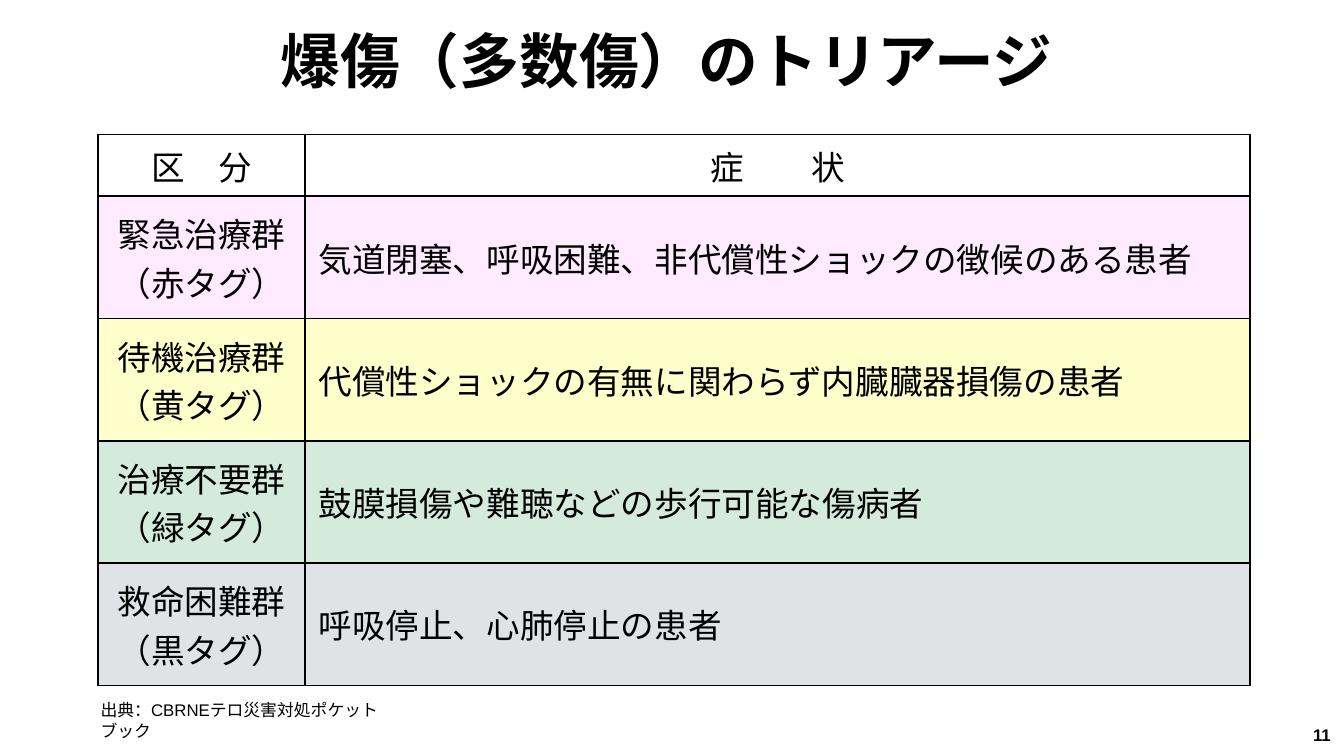
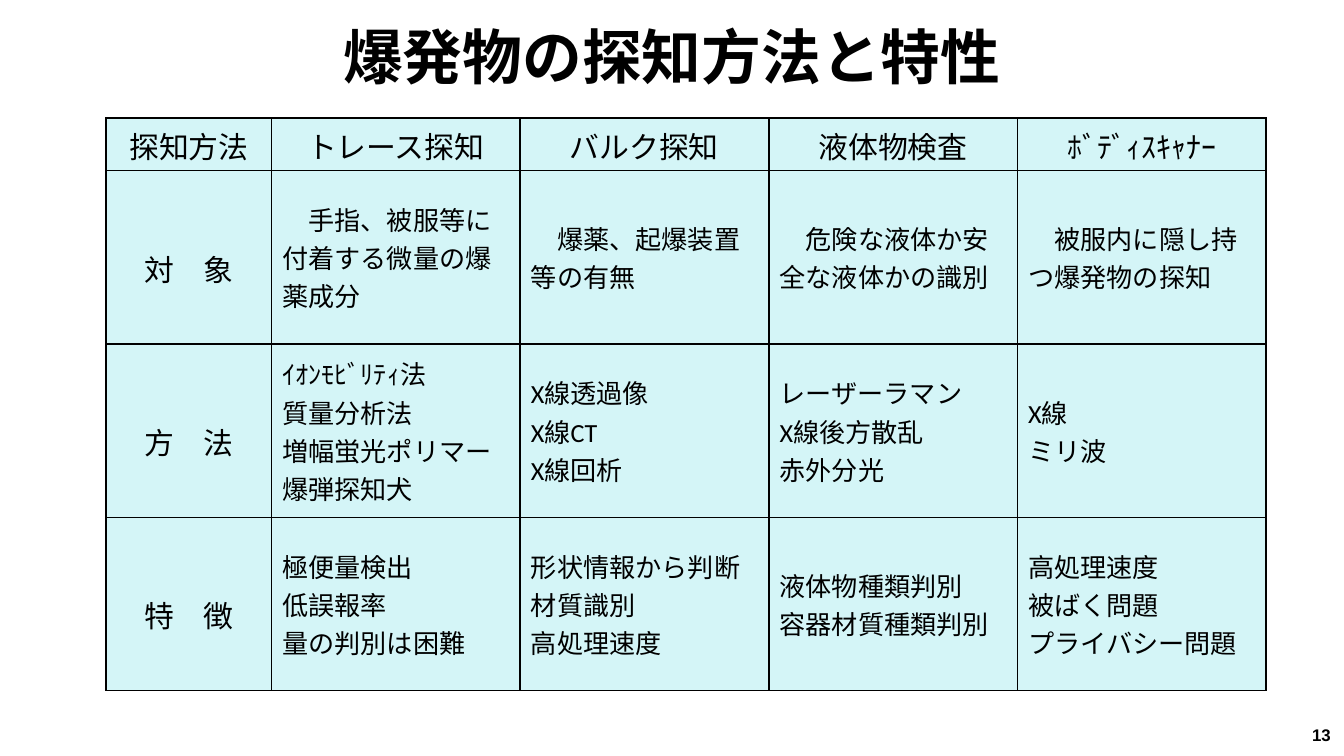
"""Build two slides on blast triage and explosive detection methods."""
from dataclasses import dataclass

import pptx
import pptx.dml.color
import pptx.enum.text
import pptx.oxml
import pptx.oxml.ns
import pptx.util
from pptx.util import Inches

ALIGN = pptx.enum.text.PP_ALIGN
MIDDLE = pptx.enum.text.MSO_ANCHOR.MIDDLE


@dataclass(frozen=True)
class Theme:
    heading_font: str = "Calibri"
    note_font: str = "Arial"
    ink: str = "000000"
    white: str = "FFFFFF"
    red_tag: str = "FFEBFF"
    yellow_tag: str = "FFFFCC"
    green_tag: str = "D4EBDB"
    black_tag: str = "DFE3E5"
    aqua: str = "D4F5F7"
    title_size: float = 32
    triage_size: float = 18
    label_size: float = 16
    detail_size: float = 14
    note_size: float = 9
    border: float = 1


THEME = Theme()


@dataclass(frozen=True)
class Box:
    left: float
    top: float
    width: float
    height: float

    def place(self) -> tuple:
        return tuple(Inches(v) for v in (self.left, self.top, self.width, self.height))


@dataclass(frozen=True)
class Row:
    cells: tuple
    fill: str


@dataclass(frozen=True)
class Grid:
    left: float
    top: float
    columns: tuple
    header_height: float
    row_height: float
    rows: tuple
    label_size: float
    detail_size: float
    margins: tuple = (0.1, 0.05)
    label_spacing: float = 1.0


PAGE_NUMBER = Box(9.41, 5.33, 0.59, 0.27)
SOURCE_NOTE = Box(0.65, 5.16, 2.49, 0.25)

TRIAGE = Grid(
    0.73, 1, (1.54, 7.03), 0.46, 0.91,
    (
        Row(("区　分", "症　　状"), THEME.white),
        Row(("緊急治療群\n（赤タグ）", "気道閉塞、呼吸困難、非代償性ショックの徴候のある患者"), THEME.red_tag),
        Row(("待機治療群\n（黄タグ）", "代償性ショックの有無に関わらず内臓臓器損傷の患者"), THEME.yellow_tag),
        Row(("治療不要群\n（緑タグ）", "鼓膜損傷や難聴などの歩行可能な傷病者"), THEME.green_tag),
        Row(("救命困難群\n（黒タグ）", "呼吸停止、心肺停止の患者"), THEME.black_tag),
    ),
    THEME.triage_size, THEME.triage_size,
)

DETECTION_CELLS = (
    ("探知方法", "トレース探知", "バルク探知", "液体物検査", "ﾎﾞﾃﾞｨｽｷｬﾅｰ"),
    ("対　象", "　手指、被服等に付着する微量の爆薬成分", "　爆薬、起爆装置等の有無",
     "　危険な液体か安全な液体かの識別", "　被服内に隠し持つ爆発物の探知"),
    ("方　法", "ｲｵﾝﾓﾋﾞﾘﾃｨ法\n質量分析法\n増幅蛍光ポリマー\n爆弾探知犬",
     "X線透過像\nX線CT\nX線回析", "レーザーラマン\nX線後方散乱\n赤外分光", "X線\nミリ波"),
    ("特　徴", "極便量検出\n低誤報率\n量の判別は困難", "形状情報から判断\n材質識別\n高処理速度",
     "液体物種類判別\n容器材質種類判別", "高処理速度\n被ばく問題\nプライバシー問題"),
)

DETECTION = Grid(
    0.79, 0.88, (1.23,) + (1.85,) * 4, 0.39, 1.29,
    tuple(Row(cells, THEME.aqua) for cells in DETECTION_CELLS),
    THEME.label_size, THEME.detail_size, (0.08, 0.04), 1.5,
)


def rgb(value: str) -> pptx.dml.color.RGBColor:
    return pptx.dml.color.RGBColor.from_string(value)


def write(tf, text: str, size: float, font: str, align=ALIGN.LEFT,
          bold: bool = False, spacing: float = 1.0) -> None:
    tf.text = text
    for p in tf.paragraphs:
        p.alignment = align
        p.line_spacing = spacing
        p.font.size = pptx.util.Pt(size)
        p.font.name = font
        p.font.bold = bold
        p.font.color.rgb = rgb(THEME.ink)


def add_title_slide(prs, title: str, box: Box, number: str):
    s = prs.slides.add_slide(prs.slide_layouts[5])
    sp = s.shapes.title
    sp.left, sp.top, sp.width, sp.height = box.place()
    tf = sp.text_frame
    tf.auto_size = pptx.enum.text.MSO_AUTO_SIZE.NONE
    tf.vertical_anchor = MIDDLE
    write(tf, title, THEME.title_size, THEME.heading_font, ALIGN.CENTER, True, 0.9)
    tf = add_text_box(s, PAGE_NUMBER)
    tf.vertical_anchor = MIDDLE
    write(tf, number, THEME.note_size, THEME.note_font, ALIGN.RIGHT, True)
    return s


def add_text_box(s, box: Box):
    tf = s.shapes.add_textbox(*box.place()).text_frame
    tf.word_wrap = True
    return tf


def add_borders(cell) -> None:
    properties = cell._tc.get_or_add_tcPr()
    namespace = pptx.oxml.ns.nsdecls("a")
    for index, side in enumerate(("lnL", "lnR", "lnT", "lnB")):
        line = pptx.oxml.parse_xml(
            f'<a:{side} {namespace} w="{pptx.util.Pt(THEME.border)}"><a:solidFill>'
            f'<a:srgbClr val="{THEME.ink}"/></a:solidFill></a:{side}>')
        properties.insert(index, line)


def add_grid(s, grid: Grid) -> None:
    height = grid.header_height + grid.row_height * (len(grid.rows) - 1)
    box = Box(grid.left, grid.top, sum(grid.columns), height)
    table = s.shapes.add_table(len(grid.rows), len(grid.columns), *box.place()).table
    table.horz_banding = False
    table.first_row = False
    for column, width in zip(table.columns, grid.columns):
        column.width = Inches(width)
    for i, row in enumerate(grid.rows):
        table.rows[i].height = Inches(grid.row_height if i else grid.header_height)
        for j, text in enumerate(row.cells):
            cell = table.cell(i, j)
            is_label = i == 0 or j == 0
            cell.fill.solid()
            cell.fill.fore_color.rgb = rgb(row.fill)
            cell.vertical_anchor = MIDDLE
            cell.margin_left = cell.margin_right = Inches(grid.margins[0])
            cell.margin_top = cell.margin_bottom = Inches(grid.margins[1])
            write(cell.text_frame, text,
                  grid.label_size if is_label else grid.detail_size, THEME.heading_font,
                  ALIGN.CENTER if is_label else ALIGN.LEFT,
                  spacing=grid.label_spacing if i and j == 0 else 1.0)
            add_borders(cell)


def main() -> None:
    prs = pptx.Presentation()
    prs.slide_width = Inches(10)
    prs.slide_height = prs.slide_width * 9 // 16

    s = add_title_slide(prs, "爆傷（多数傷）のトリアージ", Box(0.65, 0.21, 8.62, 0.54), "11")
    add_grid(s, TRIAGE)
    write(add_text_box(s, SOURCE_NOTE), "出典：CBRNEテロ災害対処ポケットブック",
          THEME.note_size, THEME.note_font)

    s = add_title_slide(prs, "爆発物の探知方法と特性", Box(0.69, 0.18, 8.62, 0.54), "13")
    add_grid(s, DETECTION)

    prs.save("out.pptx")


if __name__ == "__main__":
    main()
